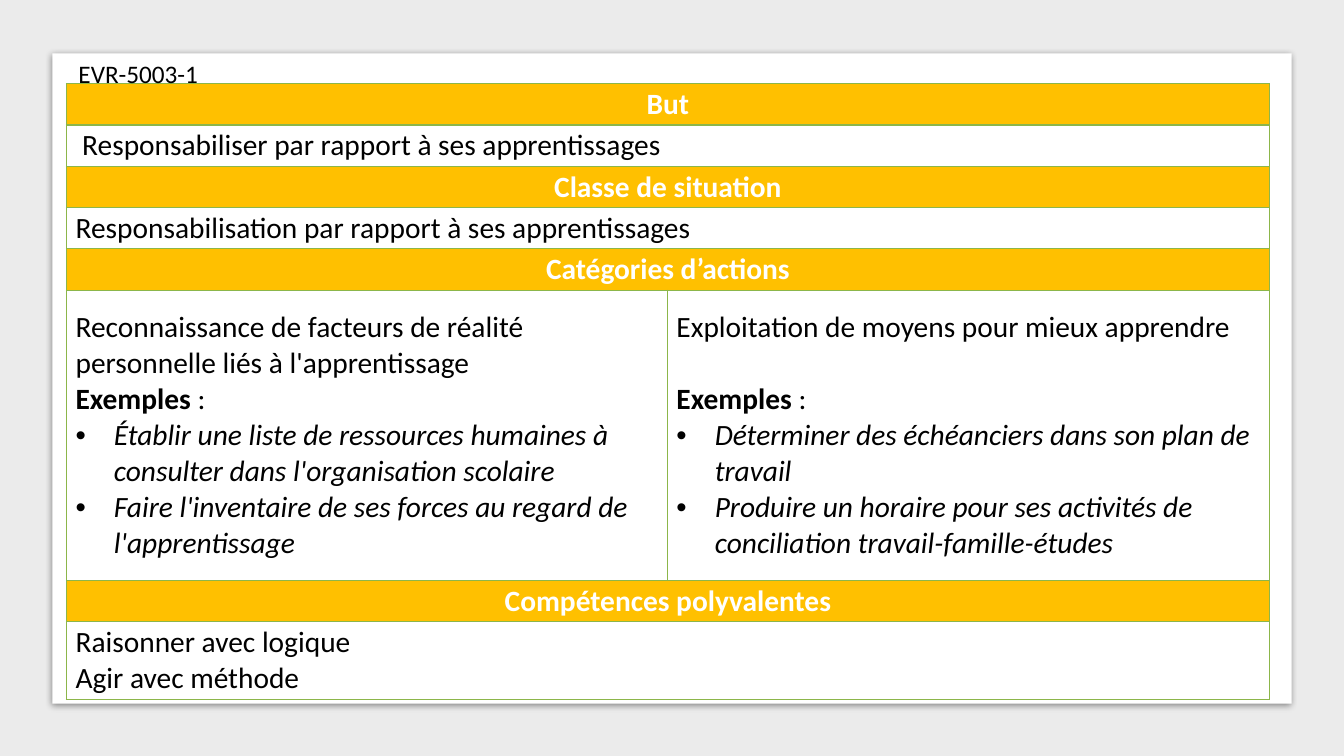
from lxml import etree
from pptx import Presentation
from pptx.dml.color import RGBColor
from pptx.enum.shapes import MSO_SHAPE
from pptx.enum.text import MSO_ANCHOR, PP_ALIGN
from pptx.oxml.ns import qn
from pptx.util import Pt

RECTANGLE = MSO_SHAPE.RECTANGLE
MIDDLE = MSO_ANCHOR.MIDDLE
LEFT, CENTER = PP_ALIGN.LEFT, PP_ALIGN.CENTER

PX = 9144
SLIDE = (1333, 750)
PANEL = (52, 53, 1229, 645)
CODE_BOX = (68, 53, 149, 40)
TABLE_ORIGIN = (66, 83)
COLUMNS = (596, 597)
BAND_HEIGHT, ACTIONS_HEIGHT, SKILLS_HEIGHT = 41, 288, 77
CELL_INSET = 9
BULLET_INDENT = 38
FONT = "Calibri"
TEXT_SIZE, CODE_SIZE = 21, 18
BLANK_LINE = 25.6

COLORS = {
    "backdrop": "EBEBEB",
    "paper": "FFFFFF",
    "heading": "FFC000",
    "heading_text": "FFFFFF",
    "text": "000000",
    "border": "8CB64A",
}

COURSE_CODE = "EVR-5003-1"
EXAMPLES = ("Exemples", " :")

ACTIONS = [
    {
        "category": "Reconnaissance de facteurs de réalité personnelle liés à l'apprentissage",
        "gap": 0,
        "examples": [
            "Établir une liste de ressources humaines à consulter dans l'organisation scolaire",
            "Faire l'inventaire de ses forces au regard de l'apprentissage",
        ],
    },
    {
        "category": "Exploitation de moyens pour mieux apprendre",
        "gap": BLANK_LINE,
        "examples": [
            "Déterminer des échéanciers dans son plan de travail",
            "Produire un horaire pour ses activités de conciliation travail-famille-études",
        ],
    },
]

SECTIONS = [
    ("But", ["\N{NO-BREAK SPACE}Responsabiliser par rapport à ses apprentissages"], BAND_HEIGHT),
    ("Classe de situation", ["Responsabilisation par rapport à ses apprentissages"], BAND_HEIGHT),
    ("Catégories d’actions", ACTIONS, ACTIONS_HEIGHT),
    ("Compétences polyvalentes", ["Raisonner avec logique", "Agir avec méthode"], SKILLS_HEIGHT),
]


def color(name):
    return RGBColor.from_string(COLORS[name])


def place(box):
    return [length * PX for length in box]


def add_run(paragraph, text, size=TEXT_SIZE, ink="text", bold=False, italic=False):
    run = paragraph.add_run()
    run.text = text
    run.font.name = FONT
    run.font.size = Pt(size)
    run.font.bold = bold
    run.font.italic = italic
    run.font.color.rgb = color(ink)


def add_bullet(paragraph):
    properties = paragraph._p.get_or_add_pPr()
    properties.set("marL", str(BULLET_INDENT * PX))
    properties.set("indent", str(-BULLET_INDENT * PX))
    etree.SubElement(properties, qn("a:buFont"), typeface="Arial")
    etree.SubElement(properties, qn("a:buChar"), char="•")


def add_rectangle(slide, box, fill):
    shape = slide.shapes.add_shape(RECTANGLE, *place(box))
    shape.fill.solid()
    shape.fill.fore_color.rgb = color(fill)
    shape.line.fill.background()
    shape.shadow.inherit = False
    return shape


def add_shadow(shape):
    effects = shape._element.spPr.find(qn("a:effectLst"))
    shadow = etree.SubElement(
        effects, qn("a:outerShdw"), blurRad=str(Pt(5)), dist=str(Pt(1.4)), dir="5400000"
    )
    ink = etree.SubElement(shadow, qn("a:srgbClr"), val=COLORS["text"])
    etree.SubElement(ink, qn("a:alpha"), val="43000")


def style_cell(cell, fill):
    cell.margin_left = cell.margin_right = CELL_INSET * PX
    cell.margin_top = cell.margin_bottom = 0
    cell.vertical_anchor = MIDDLE
    properties = cell._tc.get_or_add_tcPr()
    for side in ("a:lnL", "a:lnR", "a:lnT", "a:lnB"):
        line = etree.SubElement(properties, qn(side), w=str(Pt(1)))
        solid = etree.SubElement(line, qn("a:solidFill"))
        etree.SubElement(solid, qn("a:srgbClr"), val=COLORS["border"])
    cell.fill.solid()
    cell.fill.fore_color.rgb = color(fill)


def write_lines(cell, lines, align=LEFT, **style):
    frame = cell.text_frame
    for index, line in enumerate(lines):
        paragraph = frame.add_paragraph() if index else frame.paragraphs[0]
        paragraph.alignment = align
        add_run(paragraph, line, **style)


def write_action(cell, action):
    write_lines(cell, [action["category"]])
    label = cell.text_frame.add_paragraph()
    label.space_before = Pt(action["gap"])
    add_run(label, EXAMPLES[0], bold=True)
    add_run(label, EXAMPLES[1])
    for example in action["examples"]:
        paragraph = cell.text_frame.add_paragraph()
        add_bullet(paragraph)
        add_run(paragraph, example, italic=True)


def add_sections(slide):
    heights = [height for section in SECTIONS for height in (BAND_HEIGHT, section[2])]
    box = (*TABLE_ORIGIN, sum(COLUMNS), sum(heights))
    table = slide.shapes.add_table(len(heights), len(COLUMNS), *place(box)).table
    table.first_row = False
    table.horz_banding = False
    for column, width in zip(table.columns, COLUMNS):
        column.width = width * PX
    for index, (row, height) in enumerate(zip(table.rows, heights)):
        row.height = height * PX
        for cell in row.cells:
            style_cell(cell, "paper" if index % 2 else "heading")
    for index, (heading, content, height) in enumerate(SECTIONS):
        top, body = 2 * index, 2 * index + 1
        table.cell(top, 0).merge(table.cell(top, 1))
        write_lines(table.cell(top, 0), [heading], CENTER, ink="heading_text", bold=True)
        if content is ACTIONS:
            for column, action in enumerate(ACTIONS):
                write_action(table.cell(body, column), action)
        else:
            table.cell(body, 0).merge(table.cell(body, 1))
            write_lines(table.cell(body, 0), content)


def main():
    presentation = Presentation()
    presentation.slide_width, presentation.slide_height = place(SLIDE)
    slide = presentation.slides.add_slide(presentation.slide_layouts[6])
    add_rectangle(slide, (0, 0, *SLIDE), "backdrop")
    add_shadow(add_rectangle(slide, PANEL, "paper"))
    add_sections(slide)
    code = slide.shapes.add_textbox(*place(CODE_BOX))
    code.text_frame.word_wrap = True
    add_run(code.text_frame.paragraphs[0], COURSE_CODE, size=CODE_SIZE)
    presentation.save("out.pptx")


if __name__ == "__main__":
    main()
